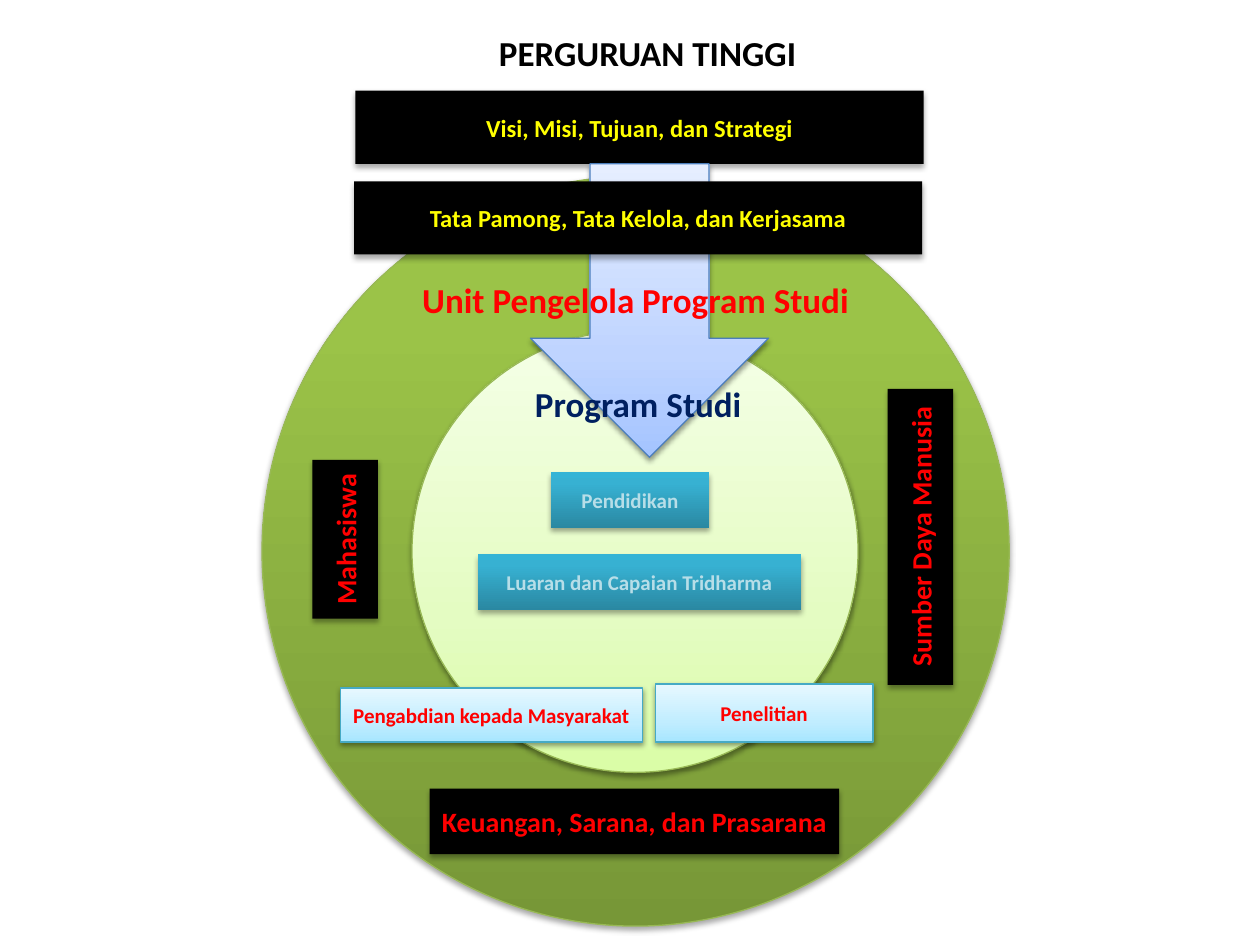
from lxml import etree
from pptx import Presentation
from pptx.dml.color import RGBColor
from pptx.enum.shapes import MSO_SHAPE
from pptx.enum.text import MSO_ANCHOR, MSO_AUTO_SIZE, PP_ALIGN
from pptx.oxml.ns import qn
from pptx.util import Inches, Pt

RECT, OVAL, ARROW = MSO_SHAPE.RECTANGLE, MSO_SHAPE.OVAL, MSO_SHAPE.DOWN_ARROW
MIDDLE, TOP = MSO_ANCHOR.MIDDLE, MSO_ANCHOR.TOP
CENTER, LEFT = PP_ALIGN.CENTER, PP_ALIGN.LEFT
FIT_SHAPE, FIT_NONE = MSO_AUTO_SIZE.SHAPE_TO_FIT_TEXT, MSO_AUTO_SIZE.NONE
TITLE_ONLY = 5

DEEP = {"alpha": 35, "dist": 1.8}
SOFT = {"alpha": 38, "dist": 1.6}
STYLES = {
    "ring": {"stops": [(0, "779737"), (80, "9BC348"), (100, "9DC746")],
             "line": "98B955", "shadow": DEEP},
    "disc": {"stops": [(0, "DAFDA7"), (35, "E4FCC2"), (100, "F5FFE7")],
             "line": "98B955", "shadow": SOFT},
    "arrow": {"stops": [(0, "A4C4FF"), (35, "BFD4FF"), (100, "E6EEFF")],
              "line": "4B7EBC", "shadow": SOFT},
    "band": {"fill": "000000", "shadow": DEEP, "size": 14, "color": "FFFF00"},
    "resource": {"fill": "000000", "shadow": DEEP, "size": 16, "color": "FF0000"},
    "core": {"stops": [(0, "2A88A2"), (80, "37B1D2"), (100, "34B4D6")],
             "shadow": DEEP, "size": 12, "color": "B7DEE8"},
    "duty": {"stops": [(0, "A7E6FF"), (35, "C1EDFF"), (100, "E7F8FF")],
             "line": "46AAC5", "shadow": SOFT, "size": 12, "color": "FF0000"},
}


def rgb(color):
    return RGBColor.from_string(color)


def place(sp, box):
    for name, value in zip(("left", "top", "width", "height"), box):
        setattr(sp, name, Inches(value))


def inside(box, left, top, width, height):
    return box[0] + left, box[1] + top, width, height


def add_color(parent, tag, color, **attrs):
    node = etree.SubElement(parent, qn(tag), **attrs)
    return etree.SubElement(node, qn("a:srgbClr"), val=color)


def set_gradient(sp, stops):
    sp.fill.gradient()
    sp.fill.gradient_angle = 90
    gs_list = sp._element.spPr.find(qn("a:gradFill")).find(qn("a:gsLst"))
    for stop in list(gs_list):
        gs_list.remove(stop)
    for position, color in stops:
        add_color(gs_list, "a:gs", color, pos=str(position * 1000))


def set_shadow(sp, alpha, dist):
    sp.shadow.inherit = False
    effects = sp._element.spPr.find(qn("a:effectLst"))
    color = add_color(effects, "a:outerShdw", "000000", blurRad=str(Pt(3.1)),
                      dist=str(Pt(dist)), dir="5400000", rotWithShape="0")
    etree.SubElement(color, qn("a:alpha"), val=str(alpha * 1000))


def write(sp, text, size, color, align=CENTER, **frame):
    tf = sp.text_frame
    tf.text = text
    for name, value in frame.items():
        setattr(tf, name, value)
    p = tf.paragraphs[0]
    p.alignment = align
    font = p.runs[0].font
    for name, value in {"name": "Calibri", "size": Pt(size), "bold": True}.items():
        setattr(font, name, value)
    font.color.rgb = rgb(color)


def add_block(s, box, style, text=None, shape=RECT, rotation=0):
    look = STYLES[style]
    sp = s.shapes.add_shape(shape, *map(Inches, box))
    sp.rotation = rotation
    if "stops" in look:
        set_gradient(sp, look["stops"])
    else:
        sp.fill.solid()
        sp.fill.fore_color.rgb = rgb(look["fill"])
    if "line" in look:
        sp.line.color.rgb = rgb(look["line"])
        sp.line.width = Pt(0.75)
    else:
        sp.line.fill.background()
    set_shadow(sp, **look["shadow"])
    if text:
        write(sp, text, look["size"], look["color"], word_wrap=True,
              vertical_anchor=MIDDLE, margin_left=Inches(0.05),
              margin_right=Inches(0.05))


def add_label(s, box, text, color):
    sp = s.shapes.add_textbox(*map(Inches, box))
    write(sp, text, 20, color, word_wrap=False, auto_size=FIT_SHAPE)


def add_title(s, box, text):
    place(s.shapes.title, box)
    write(s.shapes.title, text, 20, "000000", align=LEFT, word_wrap=False,
          vertical_anchor=TOP, auto_size=FIT_NONE)


def add_unit_ring(s, box):
    add_block(s, box, "ring", shape=OVAL)
    resources = [
        ("Keuangan, Sarana, dan Prasarana", 1.33, 4.86, 3.25, 0),
        ("Sumber Daya Manusia", 4.05, 2.6, 2.35, 270),
        ("Mahasiswa", 0.03, 2.62, 1.26, 270),
    ]
    for text, left, top, width, rotation in resources:
        add_block(s, inside(box, left, top, width, 0.52), "resource", text,
                  rotation=rotation)


def add_program_disc(s, box):
    add_block(s, box, "disc", shape=OVAL)
    activities = [
        ("Pendidikan", "core", 1.1, 1.13, 1.26, 0.44),
        ("Penelitian", "duty", 1.93, 2.81, 1.73, 0.46),
        ("Pengabdian kepada Masyarakat", "duty", -0.57, 2.84, 2.4, 0.43),
        ("Luaran dan Capaian Tridharma", "core", 0.52, 1.78, 2.57, 0.44),
    ]
    for text, style, *bounds in activities:
        add_block(s, inside(box, *bounds), style, text)


def add_university_flow(s, box):
    add_block(s, inside(box, 0.01, 0, 4.51, 0.58), "band",
              "Visi, Misi, Tujuan, dan Strategi")
    add_block(s, inside(box, 1.4, 0.58, 1.89, 2.33), "arrow", shape=ARROW)
    add_block(s, inside(box, 0, 0.72, 4.51, 0.58), "band",
              "Tata Pamong, Tata Kelola, dan Kerjasama")
    add_label(s, inside(box, 0.43, 1.44, 3.61, 0.44),
              "Unit Pengelola Program Studi", "FF0000")
    add_label(s, inside(box, 1.33, 2.27, 1.85, 0.44), "Program Studi", "002060")


def main():
    prs = Presentation()
    prs.slide_width, prs.slide_height = Inches(10), Inches(7.5)
    s = prs.slides.add_slide(prs.slide_layouts[TITLE_ONLY])
    add_title(s, (3.86, 0.2, 2.59, 0.44), "PERGURUAN TINGGI")
    add_unit_ring(s, (2.08, 1.4, 5.93, 5.95))
    add_program_disc(s, (3.27, 2.62, 3.54, 3.51))
    add_university_flow(s, (2.81, 0.72, 4.51, 2.91))
    prs.save("out.pptx")


if __name__ == "__main__":
    main()
